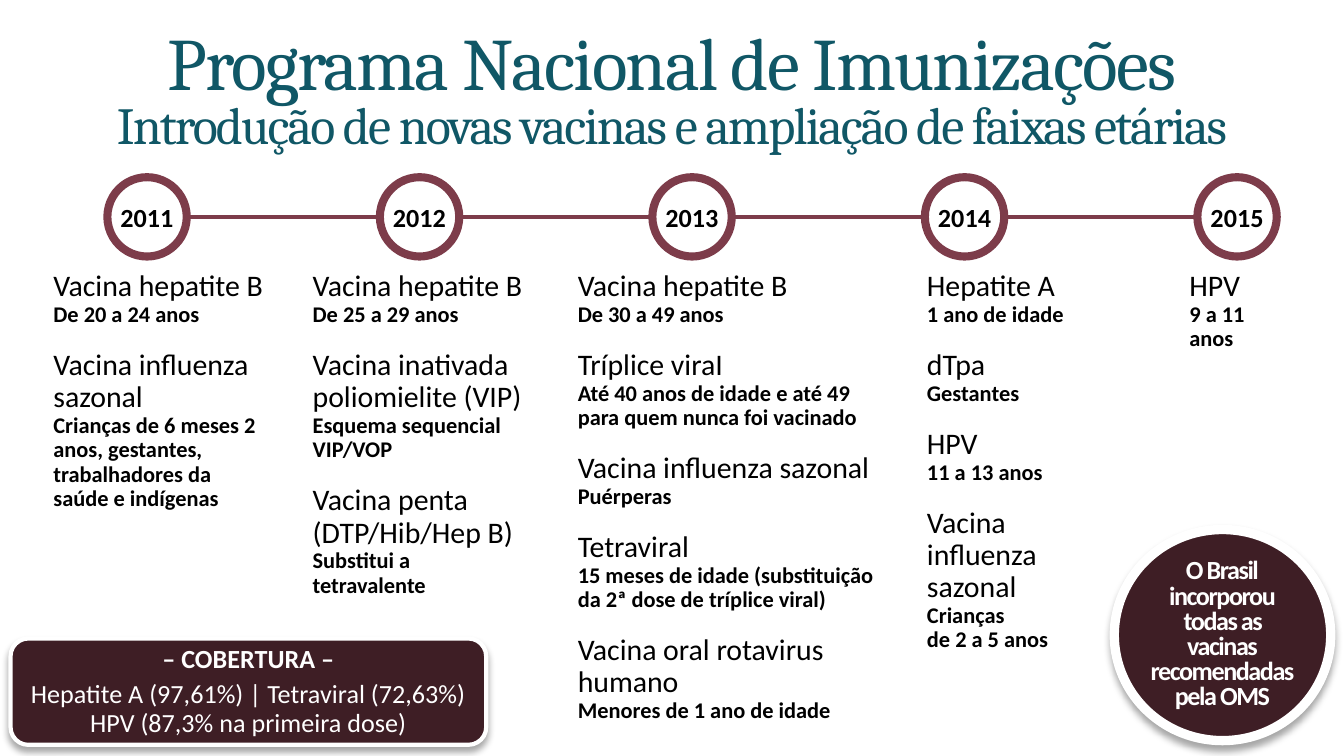
from copy import deepcopy
from dataclasses import dataclass

from lxml.etree import SubElement
from pptx import Presentation
from pptx.dml.color import RGBColor as RGB
from pptx.enum.shapes import MSO_CONNECTOR as LINE, MSO_SHAPE as SHAPE
from pptx.enum.text import MSO_ANCHOR as ANCHOR, MSO_AUTO_SIZE as FIT, PP_ALIGN as ALIGN
from pptx.oxml.ns import qn
from pptx.util import Cm, Pt


@dataclass(frozen=True)
class Theme:
    teal: RGB = RGB(0x10, 0x57, 0x66)
    wine: RGB = RGB(0x7D, 0x3C, 0x4A)
    dark: RGB = RGB(0x3E, 0x1E, 0x25)
    white: RGB = RGB(0xFF, 0xFF, 0xFF)
    black: RGB = RGB(0, 0, 0)
    heading: str = "Cambria"
    body: str = "Calibri"
    title: float = 39.6
    subtitle: float = 27.9
    vaccine: float = 16
    label: float = 14
    detail: float = 12


theme = Theme()


def write(para, text, color, size, name=theme.body, bold=False, tracking=0, **layout):
    """Add text to a paragraph; a newline becomes a line break."""
    for key, value in layout.items():
        setattr(para, key, value)
    for index, line in enumerate(text.split("\n")):
        if index:
            para.add_line_break()
        span = para.add_run()
        span.text = line
        for key, value in {"name": name, "size": Pt(size), "bold": bold}.items():
            setattr(span.font, key, value)
        span.font.color.rgb = color
        props = span._r.get_or_add_rPr()
        if tracking:
            props.set("spc", str(round(tracking * 100)))
        # Line breaks take the size of the text before them
        if line != text.split("\n")[-1]:
            last_props = props
    for line_break in para._p.findall(qn("a:br")):
        if line_break.find(qn("a:rPr")) is None:
            line_break.insert(0, deepcopy(last_props))


def add_badge(kind, place, fill, line, weight, shadow=False):
    """Add a filled, outlined shape with centred text and no margins."""
    badge = page.shapes.add_shape(kind, *map(Cm, place))
    badge.shadow.inherit = False
    badge.fill.solid()
    badge.fill.fore_color.rgb = fill
    badge.line.color.rgb = line
    badge.line.width = Pt(weight)
    if shadow:
        effects = badge._element.spPr.find(qn("a:effectLst"))
        outer = SubElement(effects, qn("a:outerShdw"), blurRad=str(Pt(4)),
                           dist=str(Pt(3)), dir="5400000", rotWithShape="0")
        tint = SubElement(outer, qn("a:srgbClr"), val=str(theme.black))
        SubElement(tint, qn("a:alpha"), val="35000")
    frame = badge.text_frame
    for key, value in {"margin_left": 0, "margin_right": 0, "margin_top": 0,
                       "margin_bottom": 0, "word_wrap": True,
                       "vertical_anchor": ANCHOR.MIDDLE}.items():
        setattr(frame, key, value)
    return frame


deck = Presentation()
deck.slide_width, deck.slide_height = Cm(25.4), Cm(14.29)
page = deck.slides.add_slide(deck.slide_layouts[5])

# Title
title = page.shapes.title
title.left, title.top, title.width, title.height = map(Cm, (0.5, 0.58, 24.4, 2.39))
for key, value in {"margin_left": Cm(0.1), "margin_right": Cm(0.1), "margin_top": Cm(0.1),
                   "margin_bottom": Cm(0.1), "word_wrap": True, "auto_size": FIT.NONE,
                   "vertical_anchor": ANCHOR.MIDDLE}.items():
    setattr(title.text_frame, key, value)
para = title.text_frame.paragraphs[0]
heading = {"color": theme.teal, "name": theme.heading, "tracking": -1}
write(para, "Programa Nacional de Imunizações\n", size=theme.title,
      alignment=ALIGN.CENTER, line_spacing=0.8, **heading)
write(para, "Introdução de novas vacinas e ampliação de faixas etárias",
      size=theme.subtitle, **heading)

# Timeline: one axis and a ring per year
first, step, ring, axis = 2.03, 5.15, 1.5, 4.1
years = range(2011, 2016)
rail = page.shapes.add_connector(LINE.STRAIGHT, Cm(first + ring), Cm(axis),
                                 Cm(first + step * (len(years) - 1)), Cm(axis))
rail.line.color.rgb = theme.wine
rail.line.width = Pt(2.25)
SubElement(rail._element.spPr, qn("a:effectLst"))
for index, year in enumerate(years):
    frame = add_badge(SHAPE.OVAL, (first + index * step, axis - ring / 2, ring, ring),
                      theme.white, theme.wine, 4.33)
    write(frame.paragraphs[0], str(year), theme.black, theme.label, bold=True,
          alignment=ALIGN.CENTER)

# Vaccines under each year: left, width, height, then (vaccine, who receives it)
columns = [
    (0.76, 4.5, 4.85, [
        ("Vacina hepatite B", "De 20 a 24 anos"),
        ("Vacina influenza sazonal",
         "Crianças de 6 meses 2 anos, gestantes, trabalhadores da saúde e indígenas")]),
    (5.66, 4.5, 6.5, [
        ("Vacina hepatite B", "De 25 a 29 anos"),
        ("Vacina inativada poliomielite (VIP)", "Esquema sequencial VIP/VOP"),
        ("Vacina penta (DTP/Hib/Hep B)", "Substitui a tetravalente")]),
    (10.67, 6.2, 8.89, [
        ("Vacina hepatite B", "De 30 a 49 anos"),
        ("Tríplice viraI", "Até 40 anos de idade e até 49 para quem nunca foi vacinado"),
        ("Vacina influenza sazonal", "Puérperas"),
        ("Tetraviral", "15 meses de idade (substituição da 2ª dose de tríplice viral)"),
        ("Vacina oral rotavirus humano", "Menores de 1 ano de idade")]),
    (17.27, 4.29, 7.54, [
        ("Hepatite A", "1 ano de idade"),
        ("dTpa", "Gestantes"),
        ("HPV", "11 a 13 anos"),
        ("Vacina\ninfluenza sazonal", "Crianças\nde 2 a 5 anos")]),
    (22.23, 2.39, 1.8, [("HPV", "9 a 11 anos")]),
]
for left, width, height, vaccines in columns:
    box = page.shapes.add_textbox(Cm(left), Cm(5), Cm(width), Cm(height))
    frame = box.text_frame
    frame.word_wrap = True
    frame.auto_size = FIT.SHAPE_TO_FIT_TEXT
    for index, (vaccine, audience) in enumerate(vaccines):
        para = frame.add_paragraph() if index else frame.paragraphs[0]
        write(para, vaccine, theme.black, theme.vaccine, line_spacing=0.9,
              space_before=Pt(12 if index else 0))
        write(frame.add_paragraph(), audience, theme.black, theme.detail, bold=True,
              line_spacing=0.9, space_before=Pt(0))

# Round note
frame = add_badge(SHAPE.OVAL, (21.06, 10.01, 4.09, 3.99), theme.dark, theme.white, 5, True)
note = ["O Brasil", "incorporou", "todas as vacinas", "recomendadas", "pela OMS"]
for index, line in enumerate(note):
    para = frame.add_paragraph() if index else frame.paragraphs[0]
    write(para, line, theme.white, theme.label, bold=True, tracking=-0.8,
          alignment=ALIGN.CENTER, line_spacing=0.8)

# Coverage panel
frame = add_badge(SHAPE.ROUNDED_RECTANGLE, (0.2, 12.07, 8.99, 2.01),
                  theme.dark, theme.white, 2.25, True)
panel = {"color": theme.white, "size": theme.label, "alignment": ALIGN.CENTER,
         "line_spacing": 0.9}
write(frame.paragraphs[0], "– COBERTURA –", bold=True, space_after=Pt(4), **panel)
write(frame.add_paragraph(),
      "Hepatite A (97,61%) | Tetraviral (72,63%)\nHPV (87,3% na primeira dose)", **panel)

deck.save("out.pptx")
